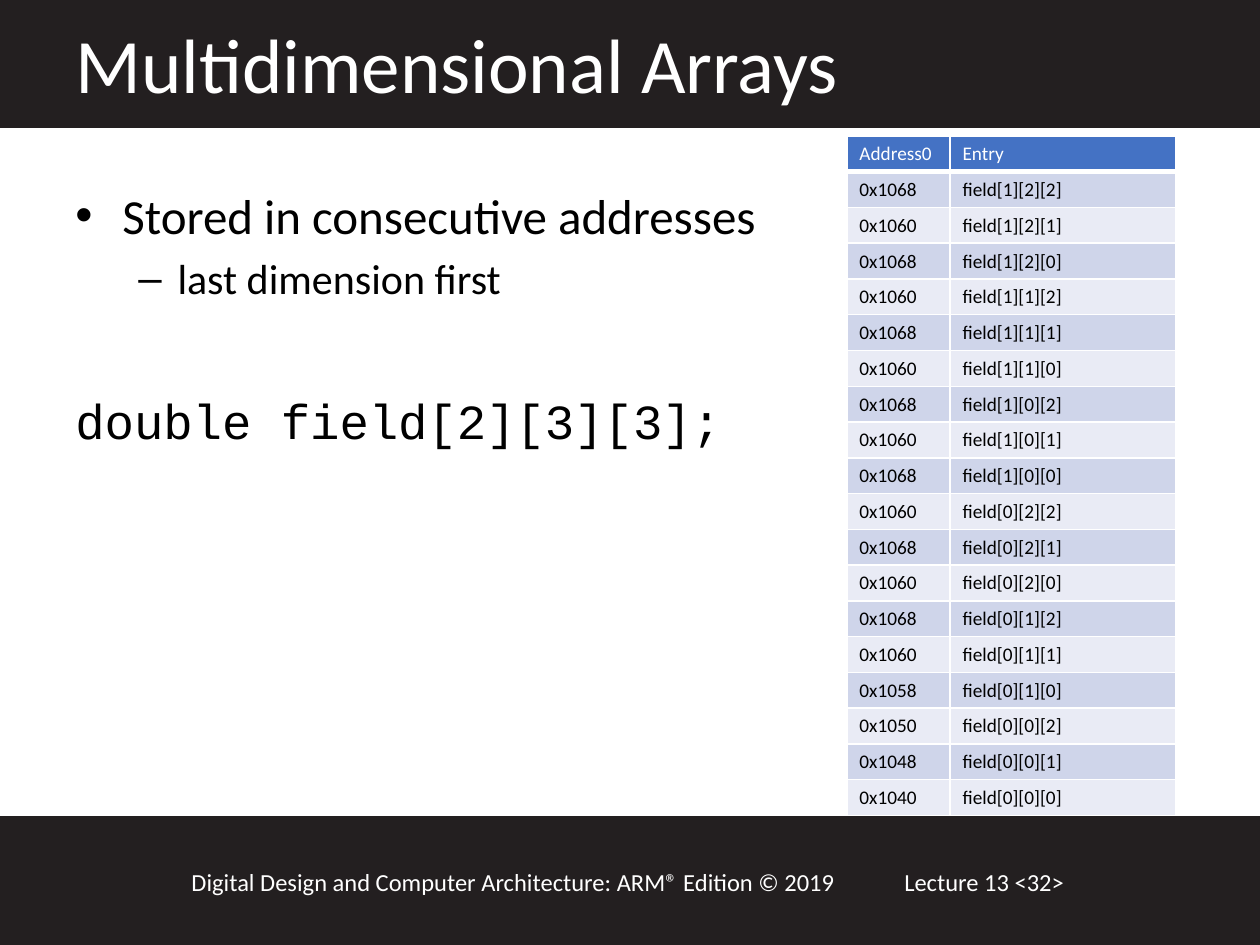
from collections import namedtuple
from itertools import product

from lxml.etree import SubElement
from pptx import Presentation
from pptx.dml.color import RGBColor
from pptx.enum.shapes import MSO_SHAPE
from pptx.enum.text import MSO_ANCHOR, MSO_AUTO_SIZE, PP_ALIGN
from pptx.oxml.ns import qn
from pptx.util import Cm, Pt

Box = namedtuple("Box", "left top width height")

INK, WHITE, BLACK = "231F20", "FFFFFF", "000000"
HEADER_BLUE, ROW_FILLS = "4472C4", ("CFD5EA", "E9EBF5")
SANS, MONO = "Calibri", "Courier New"


def color(hex_code):
    return RGBColor.from_string(hex_code)


def emu(box):
    return [Cm(length) for length in box]


def style(para, size, hex_code, name=SANS):
    para.alignment = PP_ALIGN.LEFT
    font = para.font
    font.name, font.size, font.bold = name, Pt(size), False
    font.color.rgb = color(hex_code)


def add_band(page, box):
    band = page.shapes.add_shape(MSO_SHAPE.RECTANGLE, *emu(box))
    band.shadow.inherit = False
    band.fill.solid()
    band.fill.fore_color.rgb = color(INK)
    band.line.color.rgb = color(INK)
    band.line.width = Pt(1)


def add_text_box(page, box):
    frame = page.shapes.add_textbox(*emu(box)).text_frame
    frame.word_wrap = True
    return frame


def add_heading(page, box, text):
    add_band(page, box)
    title = page.shapes.title
    title.element.getparent().append(title.element)
    title.left, title.top, title.width, title.height = emu(
        Box(box.left + 1.27, box.top + 0.2, 22.02, 2.13))
    frame = title.text_frame
    frame.text = text
    frame.auto_size = MSO_AUTO_SIZE.NONE
    frame.vertical_anchor = MSO_ANCHOR.TOP
    style(frame.paragraphs[0], 44, WHITE)


def add_footer(page, box, book, lecture):
    add_band(page, box)
    for text, left, width in ((lecture, 17.98, 5.51), (book, 3.61, 14.61)):
        frame = add_text_box(page, Box(box.left + left, box.top + 0.89, width, 0.86))
        frame.text = text
        style(frame.paragraphs[0], 14, WHITE)


def set_bullet(para, mark, margin, hanging):
    properties = para._p.get_or_add_pPr()
    properties.set("marL", str(Cm(margin)))
    properties.set("indent", str(-Cm(hanging)))
    SubElement(properties, qn("a:buFont"), typeface="Arial")
    SubElement(properties, qn("a:buChar"), char=mark)


def add_body(page, box, point, detail, code):
    frame = add_text_box(page, box)
    first, second, third = frame.paragraphs[0], frame.add_paragraph(), frame.add_paragraph()
    first.text, second.text, third.text = point, detail, code
    second.level = 1
    set_bullet(first, "•", 0.95, 0.95)
    set_bullet(second, "–", 2.06, 0.79)
    second.space_before, third.space_before = Pt(4.8), Pt(50)
    style(first, 28, BLACK)
    style(second, 24, BLACK)
    style(third, 28, BLACK, MONO)


def set_borders(cell, bottom_width):
    properties = cell._tc.get_or_add_tcPr()
    for side, width in (("L", 1), ("R", 1), ("T", 1), ("B", bottom_width)):
        line = SubElement(properties, qn(f"a:ln{side}"), w=str(Pt(width)))
        SubElement(SubElement(line, qn("a:solidFill")), qn("a:srgbClr"), val=WHITE)


def add_memory_table(page, box, rows):
    table = page.shapes.add_table(len(rows), 2, *emu(box)).table
    address_width = 2.08
    table.columns[0].width = Cm(address_width)
    table.columns[1].width = Cm(box.width - address_width)
    for row_index, texts in enumerate(rows):
        header = row_index == 0
        table.rows[row_index].height = Cm(box.height / len(rows))
        for column_index, text in enumerate(texts):
            cell = table.cell(row_index, column_index)
            cell.text = text
            style(cell.text_frame.paragraphs[0], 11, WHITE if header else BLACK)
            set_borders(cell, 3 if header else 1)
            cell.fill.solid()
            cell.fill.fore_color.rgb = color(
                HEADER_BLUE if header else ROW_FILLS[(row_index - 1) % 2])


def memory_rows():
    addresses = ["0x1068", "0x1060"] * 7 + ["0x1058", "0x1050", "0x1048", "0x1040"]
    entries = [f"field[{i}][{j}][{k}]"
               for i, j, k in product((1, 0), (2, 1, 0), (2, 1, 0))]
    return [("Address0", "Entry"), *zip(addresses, entries)]


def main():
    deck = Presentation()
    deck.slide_width, deck.slide_height = Cm(25.4), Cm(19.05)
    page = deck.slides.add_slide(deck.slide_layouts[5])
    add_footer(page, Box(0, 16.46, 25.4, 2.59),
               "Digital Design and Computer Architecture: ARM® Edition © 2019",
               "Lecture 13 <32>")
    add_heading(page, Box(0, 0, 25.4, 2.57), "Multidimensional Arrays")
    add_body(page, Box(1.27, 3.61, 14.81, 12.57), "Stored in consecutive addresses",
             "last dimension first", "double field[2][3][3];")
    add_memory_table(page, Box(17.07, 2.74, 6.63, 13.68), memory_rows())
    deck.save("out.pptx")


if __name__ == "__main__":
    main()
